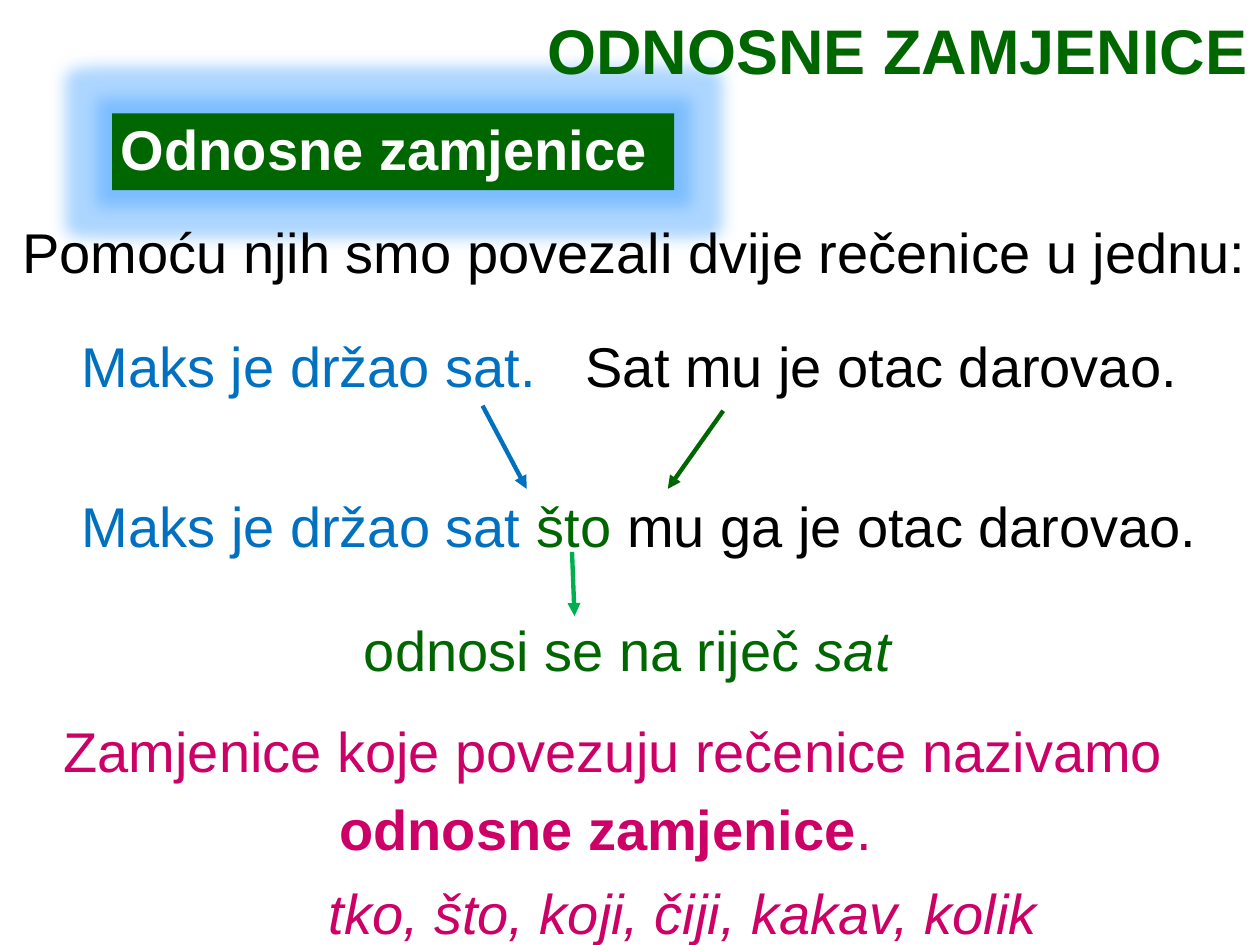
from lxml import etree
from pptx import Presentation
from pptx import util as u
from pptx.dml.color import RGBColor
from pptx.enum import shapes, text
from pptx.oxml.ns import qn

FONT = "Arial"
WHITE, BLACK, GREEN, BLUE, PINK = "FFFFFF", "000000", "006600", "0070C0", "CC0066"
LIGHT_GREEN, GLOW = "00B050", "3399FF"
LEFT, CENTER, RIGHT = text.PP_ALIGN.LEFT, text.PP_ALIGN.CENTER, text.PP_ALIGN.RIGHT
TOP, BOTTOM = text.MSO_ANCHOR.TOP, text.MSO_ANCHOR.BOTTOM

# Content: box (left, top, width, height), runs (words, colour, style), options
HEADING_BAR = (0.89, 0.9, 4.46, 0.61)
TEXTS = [
    ((0.89, 0.75, 4.46, 0.73), [("Odnosne zamjenice", WHITE, "b")],
     dict(anchor=BOTTOM, before=10, insets=(0.07, 0.04))),
    ((0.08, 1.68, 9.93, 0.64),
     [("Pomoću njih smo povezali dvije rečenice u jednu:", BLACK, "")], {}),
    ((0.55, 2.58, 9.1, 0.64),
     [("Maks je držao sat. \t", BLUE, ""), ("Sat mu je otac darovao.", BLACK, "")],
     dict(wrap=False)),
    ((0.55, 3.77, 9.12, 0.72),
     [("Maks je držao sat ", BLUE, ""), ("što ", GREEN, ""),
      ("mu ga je otac darovao.", BLACK, "")], dict(wrap=False, spacing=1.15)),
    ((2.79, 4.76, 4.41, 0.67),
     [("odnosi se na riječ ", GREEN, ""), ("sat", GREEN, "i")],
     dict(wrap=False, spacing=1.15)),
    ((0.08, 5.56, 9.58, 1.34),
     [("Zamjenice koje povezuju rečenice nazivamo ", PINK, ""),
      ("odnosne zamjenice", PINK, "b"), (". ", PINK, "")],
     dict(align=CENTER, spacing=1.15)),
    ((2.51, 6.92, 5.87, 0.64),
     [("tko, što, koji, čiji, kakav, kolik", PINK, "i")], dict(wrap=False)),
    ((2.23, -0.01, 7.77, 0.76), [("ODNOSNE ZAMJENICE", GREEN, "b")],
     dict(size=36, anchor=BOTTOM, align=RIGHT, spacing=0.9)),
]
ARROWS = [  # from, to, colour
    ((4.54, 4.38), (4.56, 4.89), LIGHT_GREEN),
    ((3.83, 3.22), (4.18, 3.88), BLUE),
    ((5.74, 3.26), (5.3, 3.88), GREEN),
]


def colour(value):
    return RGBColor.from_string(value)


def inches(values):
    return [u.Inches(value) for value in values]


def add_glow(shape, value, radius, opacity):
    properties = shape._element.spPr
    for old in properties.findall(qn("a:effectLst")):
        properties.remove(old)
    effects = etree.SubElement(properties, qn("a:effectLst"))
    glow = etree.SubElement(effects, qn("a:glow"), rad=str(u.Pt(radius)))
    tint = etree.SubElement(glow, qn("a:srgbClr"), val=value)
    etree.SubElement(tint, qn("a:alpha"), val=str(opacity * 1000))


def add_text(slide, box, runs, size=32, align=LEFT, anchor=TOP, wrap=True,
             spacing=None, before=0, insets=(0.1, 0.05)):
    frame = slide.shapes.add_textbox(*inches(box)).text_frame
    frame.word_wrap = wrap
    frame.vertical_anchor = anchor
    frame.margin_left = frame.margin_right = u.Inches(insets[0])
    frame.margin_top = frame.margin_bottom = u.Inches(insets[1])
    paragraph = frame.paragraphs[0]
    paragraph.alignment = align
    paragraph.line_spacing = spacing
    paragraph.space_before = u.Pt(before)
    paragraph.font.name, paragraph.font.size = FONT, u.Pt(size)
    for words, value, style in runs:
        run = paragraph.add_run()
        run.text = words
        run.font.name, run.font.size = FONT, u.Pt(size)
        run.font.color.rgb = colour(value)
        run.font.bold, run.font.italic = style == "b", style == "i"


def add_arrow(slide, start, end, value):
    arrow = slide.shapes.add_connector(
        shapes.MSO_CONNECTOR.STRAIGHT, *inches(start + end))
    arrow.line.color.rgb = colour(value)
    arrow.line.width = u.Pt(2.5)
    etree.SubElement(arrow.line._get_or_add_ln(), qn("a:tailEnd"), type="triangle")
    etree.SubElement(arrow._element.spPr, qn("a:effectLst"))


def main():
    presentation = Presentation()
    presentation.slide_width, presentation.slide_height = inches((10, 7.5))
    slide = presentation.slides.add_slide(presentation.slide_layouts[6])

    # Glowing bar behind the heading
    bar = slide.shapes.add_shape(shapes.MSO_SHAPE.RECTANGLE, *inches(HEADING_BAR))
    bar.fill.solid()
    bar.fill.fore_color.rgb = colour(GREEN)
    bar.line.fill.background()
    add_glow(bar, GLOW, radius=18, opacity=40)

    # Sentences, then the arrows that join them
    for box, runs, options in TEXTS:
        add_text(slide, box, runs, **options)
    for arrow in ARROWS:
        add_arrow(slide, *arrow)

    presentation.save("out.pptx")


if __name__ == "__main__":
    main()
